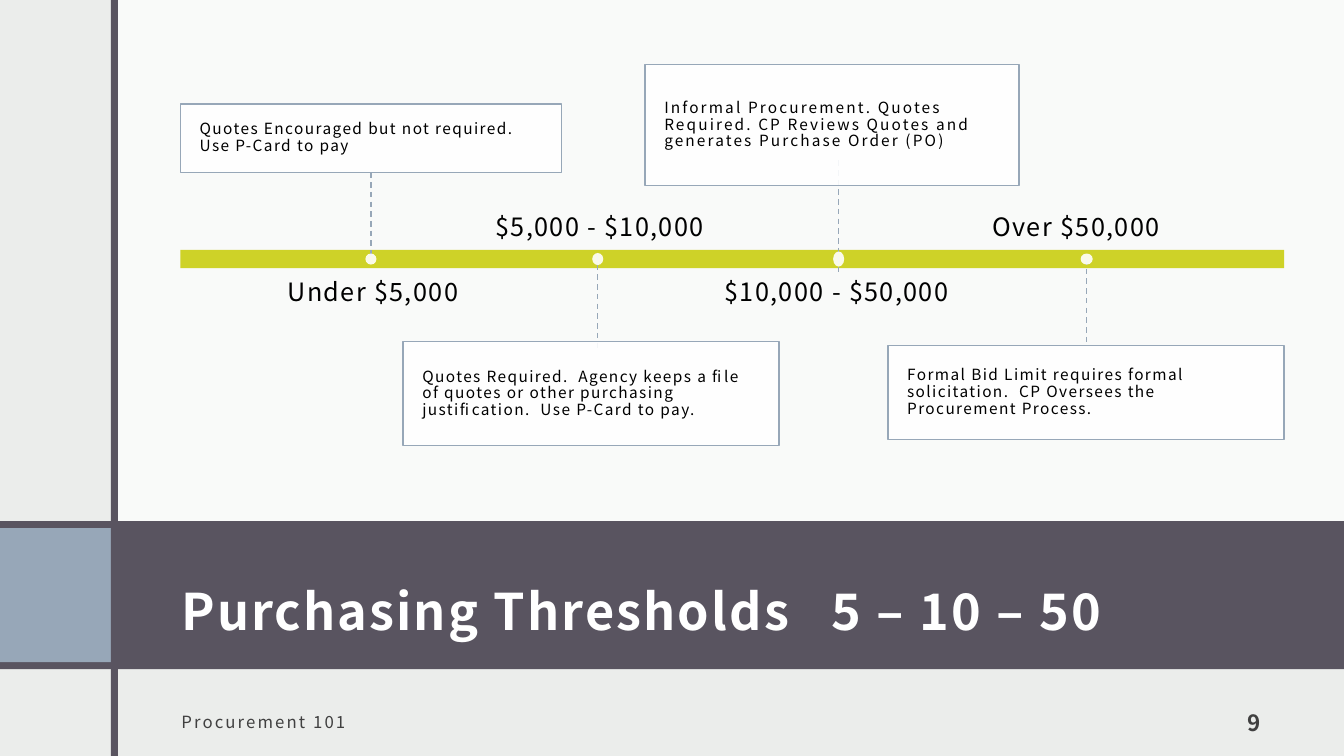
from dataclasses import dataclass

from pptx import Presentation
from pptx import util as u
from pptx.dml import color
from pptx.enum import dml, shapes, text
from pptx.oxml import ns, xmlchemy


@dataclass(frozen=True)
class Theme:
    font: str = "Noto Sans CJK JP"
    paper: str = "EBEDEB"
    white: str = "FFFFFF"
    plum: str = "595460"
    steel: str = "97A7B8"
    lime: str = "CED228"
    ink: str = "000000"
    grey: str = "404040"
    title: int = 36
    label: int = 18
    number: int = 16
    footer: int = 12
    note: int = 11


COLUMNS, ROWS = 133.33, 75
WIDTH, HEIGHT = u.Inches(13.33), u.Inches(7.5)
TOP, MIDDLE, BOTTOM = text.MSO_ANCHOR.TOP, text.MSO_ANCHOR.MIDDLE, text.MSO_ANCHOR.BOTTOM
LEFT, CENTER, RIGHT = text.PP_ALIGN.LEFT, text.PP_ALIGN.CENTER, text.PP_ALIGN.RIGHT
FRAME_INSETS = (1.2, 1.2, 1.2, 1)


def child(parent, tag, **attributes):
    element = xmlchemy.OxmlElement(tag)
    for key, value in attributes.items():
        element.set(key, str(value))
    parent.append(element)
    return element


class Canvas:
    def __init__(self, slide, theme):
        self.slide, self.theme = slide, theme
        slide.background.fill.solid()
        slide.background.fill.fore_color.rgb = color.RGBColor.from_string(theme.paper)

    def x(self, columns):
        return round(WIDTH * columns / COLUMNS)

    def y(self, rows):
        return round(HEIGHT * rows / ROWS)

    def area(self, left, top, width, height):
        return self.x(left), self.y(top), self.x(width), self.y(height)

    def block(self, area, fill, opacity=100, outline=None, kind=shapes.MSO_SHAPE.RECTANGLE):
        block = self.slide.shapes.add_shape(kind, *self.area(*area))
        block.shadow.inherit = False
        block.fill.solid()
        block.fill.fore_color.rgb = color.RGBColor.from_string(fill)
        if opacity < 100:
            tint = block._element.spPr.find(ns.qn("a:solidFill"))[0]
            child(tint, "a:alpha", val=opacity * 1000)
        if outline:
            block.line.color.rgb = color.RGBColor.from_string(outline)
            block.line.width = u.Pt(1)
        else:
            block.line.fill.background()
        return block

    def dot(self, x, y, width, height):
        area = (x - width / 2, y - height / 2, width, height)
        self.block(area, self.theme.white, 90, kind=shapes.MSO_SHAPE.OVAL)

    def stem(self, x, top, bottom):
        stem = self.slide.shapes.add_connector(
            shapes.MSO_CONNECTOR.STRAIGHT, self.x(x), self.y(top), self.x(x), self.y(bottom))
        stem.line.color.rgb = color.RGBColor.from_string(self.theme.steel)
        stem.line.width = u.Pt(1)
        stem.line.dash_style = dml.MSO_LINE.DASH
        child(stem._element.spPr, "a:effectLst")

    def letter(self, holder, words, size, ink, anchor=MIDDLE, align=LEFT,
               insets=(0, 0, 0, 0), bold=False, tracking=1.0, leading=None):
        frame = holder.text_frame
        frame.word_wrap = True
        frame.vertical_anchor = anchor
        frame.margin_left, frame.margin_right = self.x(insets[0]), self.x(insets[2])
        frame.margin_top, frame.margin_bottom = self.y(insets[1]), self.y(insets[3])
        paragraph = frame.paragraphs[0]
        paragraph.alignment = align
        if leading:
            paragraph.line_spacing = leading
        run = paragraph.add_run()
        run.text = words
        run.font.name, run.font.size, run.font.bold = self.theme.font, u.Pt(size), bold
        run.font.color.rgb = color.RGBColor.from_string(ink)
        run.font._element.set("spc", str(round(tracking * 100)))

    def caption(self, area, words, size, ink, **style):
        holder = self.slide.shapes.add_textbox(*self.area(*area))
        self.letter(holder, words, size, ink, **style)

    def note(self, area, words, tracking):
        holder = self.block(area, self.theme.white, 90, self.theme.steel)
        self.letter(holder, words, self.theme.note, self.theme.ink,
                    insets=(1.9, 0.5, 1.9, 0.5), tracking=tracking, leading=0.9)


@dataclass(frozen=True)
class Threshold:
    amount: str
    rule: str
    x: float
    label_x: float
    note: tuple
    stem: tuple
    dot: tuple = (1.1, 1.1)
    tracking: float = 1.0


THRESHOLDS = [
    Threshold("Under $5,000", "Quotes Encouraged but not required. Use P-Card to pay",
              36.8, 37, (17.9, 10.3, 37.8, 6.8), (17.1, 25.7)),
    Threshold("$5,000 - $10,000",
              "Quotes Required.  Agency keeps a file of quotes or other purchasing "
              "justification.  Use P-Card to pay.",
              59.3, 59.5, (40, 33.9, 37.3, 10.3), (25.3, 34.7), (1.1, 1.2)),
    Threshold("$10,000 - $50,000",
              "Informal Procurement. Quotes Required. CP Reviews Quotes and "
              "generates Purchase Order (PO)",
              83.2, 83, (64, 6.4, 37.1, 12), (15.9, 27), (1.1, 1.5), 1.5),
    Threshold("Over $50,000 ",
              "Formal Bid Limit requires formal solicitation.  CP Oversees the "
              "Procurement Process.",
              107.8, 107.1, (88.1, 34.3, 39.3, 9.3), (25.7, 34.3), (1.2, 1.1)),
]


def draw_backdrop(canvas):
    theme = canvas.theme
    canvas.block((11.4, 0, COLUMNS - 11.4, 51.7), theme.white, 75)
    canvas.block((0, 51.7, COLUMNS, 14.7), theme.plum)
    canvas.block((0, 52.4, 11, 13.3), theme.steel)
    canvas.block((11, 0, 0.7, ROWS), theme.plum)


def draw_captions(canvas):
    theme = canvas.theme
    canvas.caption((16.8, 53.3, 109.5, 11.3), "Purchasing Thresholds   5 – 10 – 50",
                   theme.title, theme.white, insets=FRAME_INSETS, bold=True,
                   tracking=1.5, leading=1.5)
    canvas.caption((16.8, 69, 54.1, 5), "Procurement 101", theme.footer, theme.grey,
                   insets=FRAME_INSETS, tracking=1.5)
    canvas.caption((115.6, 69, 10.7, 5), "9", theme.number, theme.grey, anchor=BOTTOM,
                   align=RIGHT, insets=FRAME_INSETS, bold=True, tracking=1.5)


def draw_timeline(canvas):
    theme = canvas.theme
    axis, label_width = 25.7, 35
    canvas.block((17.9, 24.8, 109.5, 1.8), theme.lime)
    for threshold in THRESHOLDS:
        note_above = threshold.note[1] < axis
        label_top, anchor = (27.4, TOP) if note_above else (18.9, BOTTOM)
        canvas.stem(threshold.x, *threshold.stem)
        canvas.note(threshold.note, threshold.rule, threshold.tracking)
        canvas.caption((threshold.label_x - label_width / 2, label_top, label_width, 5.1),
                       threshold.amount, theme.label, theme.ink, anchor=anchor, align=CENTER)
        canvas.dot(threshold.x, axis, *threshold.dot)


def main():
    deck = Presentation()
    deck.slide_width, deck.slide_height = WIDTH, HEIGHT
    canvas = Canvas(deck.slides.add_slide(deck.slide_layouts[6]), Theme())
    draw_backdrop(canvas)
    draw_captions(canvas)
    draw_timeline(canvas)
    deck.save("out.pptx")


if __name__ == "__main__":
    main()
